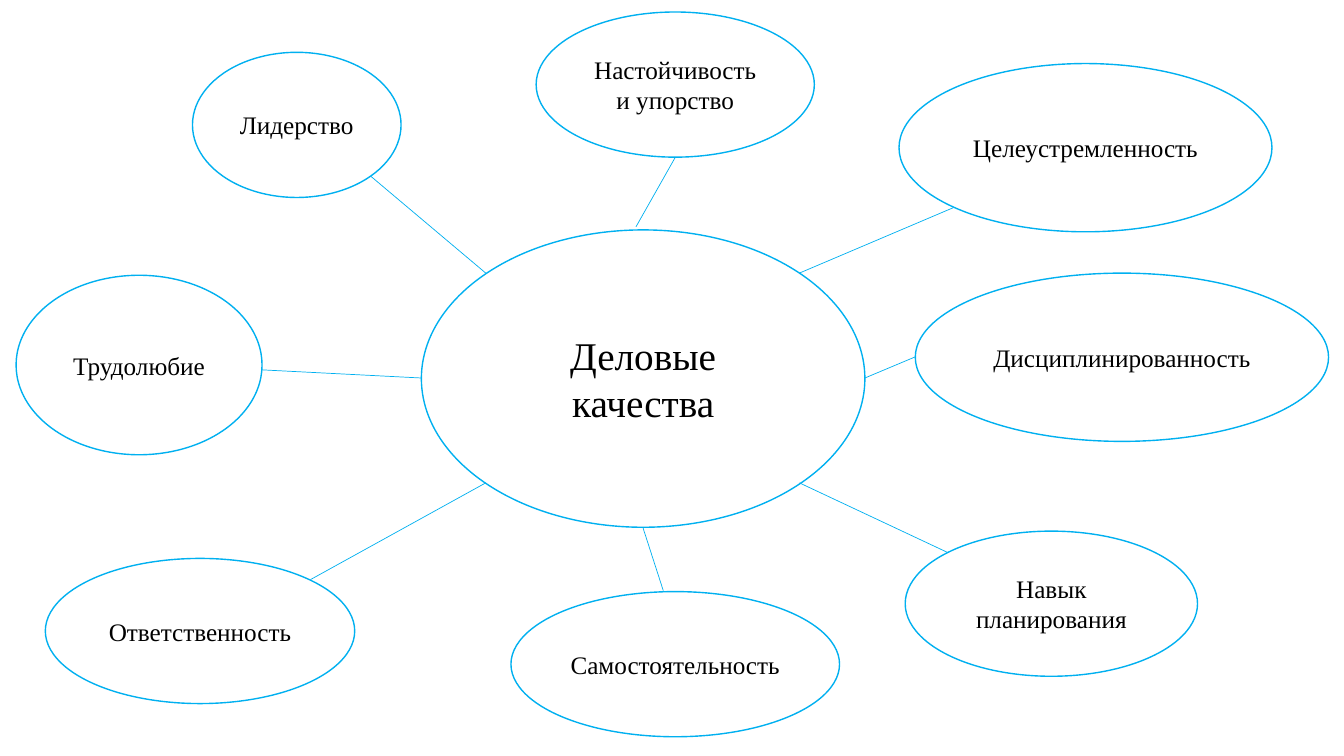
from lxml.etree import SubElement
from pptx import Presentation
from pptx.dml.color import RGBColor
from pptx.enum.shapes import MSO_CONNECTOR as CONNECTOR, MSO_SHAPE as SHAPE
from pptx.enum.text import MSO_ANCHOR as ANCHOR, PP_ALIGN as ALIGN
from pptx.oxml.ns import qn
from pptx.util import Pt

WHITE = RGBColor(0xFF, 0xFF, 0xFF)
BLACK = RGBColor(0, 0, 0)
CYAN = RGBColor(0x00, 0xB0, 0xF0)
FONT = "Times New Roman"

prs = Presentation()
prs.slide_width, prs.slide_height = Pt(960), Pt(540)
slide = prs.slides.add_slide(prs.slide_layouts[6])


def add_bubble(text, *, left, top, width, height, size=18):
    bubble = slide.shapes.add_shape(
        SHAPE.OVAL, Pt(left), Pt(top), Pt(width), Pt(height))
    bubble.shadow.inherit = False
    bubble.fill.solid()
    bubble.fill.fore_color.rgb = WHITE
    bubble.line.color.rgb = CYAN
    bubble.line.width = Pt(1)
    frame = bubble.text_frame
    frame.word_wrap = True
    frame.vertical_anchor = ANCHOR.MIDDLE
    paragraph = frame.paragraphs[0]
    paragraph.alignment = ALIGN.CENTER
    run = paragraph.add_run()
    run.text = text
    run.font.name = FONT
    run.font.size = Pt(size)
    run.font.color.rgb = BLACK


# Central topic
add_bubble("Деловые качества", left=301, top=164.2, width=316.8, height=212.4, size=28)

# Qualities: text, bubble box, spoke start at the centre, spoke end at the bubble
qualities = [
    ("Трудолюбие", (11.5, 196.6, 175.7, 128.2), (301, 270), (187.2, 264.2)),
    ("Лидерство", (137.5, 37.4, 149, 103.7), (347, 195.1), (265, 126)),
    ("Настойчивость и упорство", (383, 8.6, 198.7, 103.7), (454.3, 162), (482.4, 112.3)),
    ("Целеустремленность", (642.2, 45.4, 266.4, 120.2), (571, 195.1), (681.1, 148.3)),
    ("Дисциплинированность", (653.8, 195.1, 295.2, 120.2), (617.8, 270), (653.8, 254.9)),
    ("Навык планирования", (646.6, 379.4, 208.8, 103.7), (571, 344.9), (676.8, 394.6)),
    ("Самостоятельность", (365, 422.6, 234.7, 103.7), (459.4, 377.3), (473.8, 421.9)),
    ("Ответственность", (32.4, 398.9, 221, 103.7), (347, 344.9), (221.8, 414)),
]

# Spokes, behind the outer bubbles
for _, _, start, end in qualities:
    spoke = slide.shapes.add_connector(
        CONNECTOR.STRAIGHT, *(Pt(value) for value in start + end))
    spoke.line.color.rgb = CYAN
    spoke.line.width = Pt(0.5)
    SubElement(spoke._element.spPr, qn("a:effectLst"))

# Outer bubbles
for quality, (left, top, width, height), _, _ in qualities:
    add_bubble(quality, left=left, top=top, width=width, height=height)

prs.save("out.pptx")
